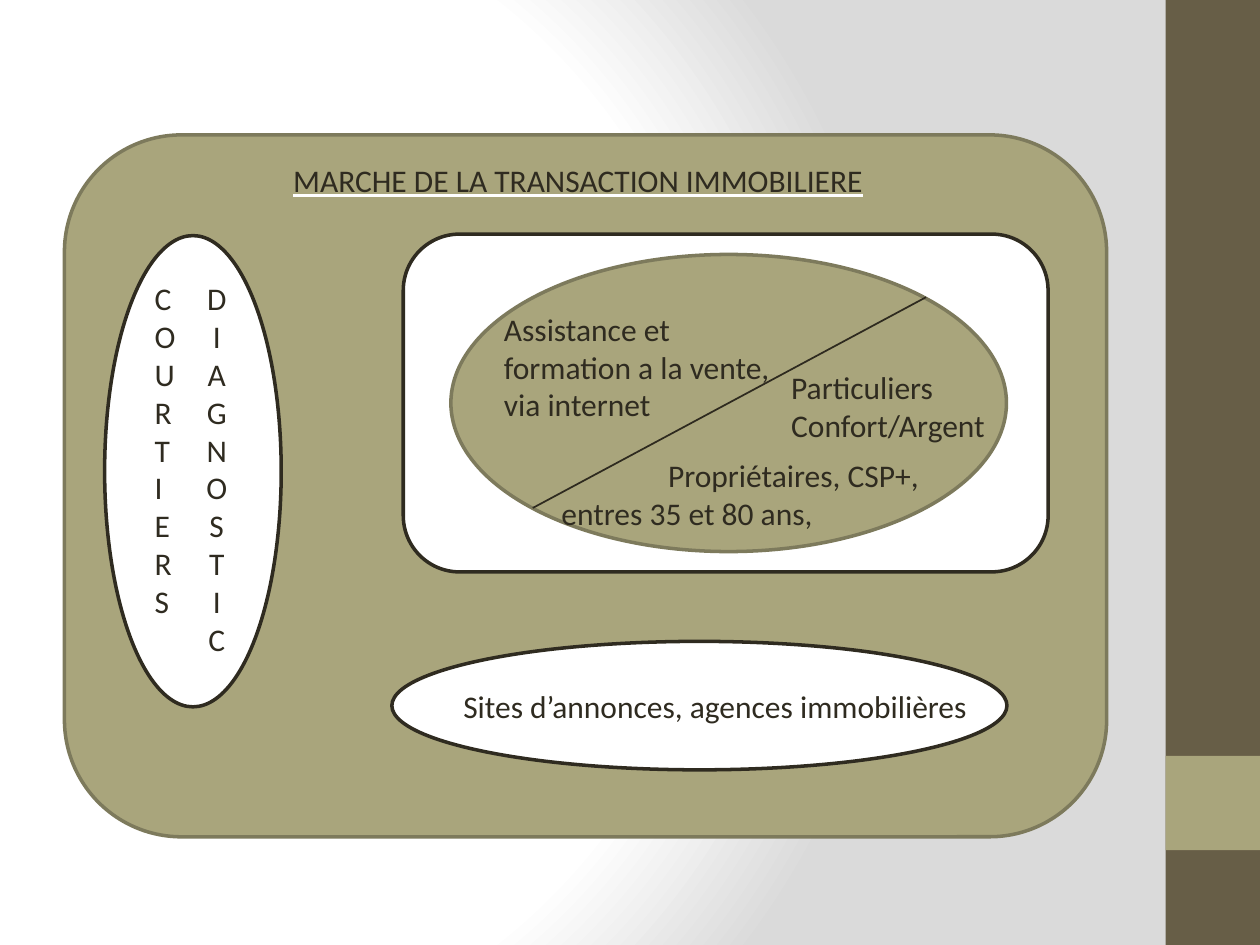
from dataclasses import dataclass
from itertools import zip_longest

from lxml.etree import SubElement
from pptx import Presentation
from pptx.dml.color import RGBColor
from pptx.enum.shapes import MSO_CONNECTOR as Connector, MSO_SHAPE as Shape
from pptx.enum.text import MSO_AUTO_SIZE as AutoSize
from pptx.oxml import parse_xml
from pptx.oxml.ns import nsdecls, qn
from pptx.util import Cm, Pt


@dataclass(frozen=True)
class Theme:
    """Colours, font and sizes of the slide."""
    white: str = "FFFFFF"
    mist: str = "DADADA"
    olive: str = "A9A57C"
    olive_edge: str = "7D7A5C"
    bark: str = "675E47"
    ink: str = "2F2B20"
    divider: str = "2E2A1F"
    font: str = "Calibri"
    text_size: int = 18
    outline: int = 2
    hairline: int = 1


THEME = Theme()


def rgb(colour):
    """Turn a hex string into a colour."""
    return RGBColor.from_string(colour)


def paint_background(slide):
    """Fill the background with a circular white-to-grey gradient."""
    slide.background.fill.gradient()
    plain = next(slide.element.iter(qn("a:gradFill")))
    stops = "".join(
        f'<a:gs pos="{percent * 1000}"><a:srgbClr val="{colour}"/></a:gs>'
        for percent, colour in ((0, THEME.white), (75, THEME.white), (100, THEME.mist))
    )
    circular = parse_xml(
        f'<a:gradFill {nsdecls("a")} rotWithShape="1"><a:gsLst>{stops}</a:gsLst>'
        '<a:path path="circle"><a:fillToRect l="20000" t="50000" r="100000" b="50000"/>'
        '</a:path></a:gradFill>'
    )
    plain.getparent().replace(plain, circular)


def add_zone(slide, kind, box, fill, edge=None):
    """Draw a filled preset shape, outlined when an edge colour is given."""
    zone = slide.shapes.add_shape(kind, *map(Cm, box))
    zone.shadow.inherit = False
    zone.fill.solid()
    zone.fill.fore_color.rgb = rgb(fill)
    if edge:
        zone.line.color.rgb = rgb(edge)
        zone.line.width = Pt(THEME.outline)
    else:
        zone.line.fill.background()


def add_label(slide, box, text):
    """Write wrapped text and return its paragraphs."""
    label = slide.shapes.add_textbox(*map(Cm, box))
    frame = label.text_frame
    frame.word_wrap = True
    frame.auto_size = AutoSize.SHAPE_TO_FIT_TEXT
    frame.text = text
    for paragraph in frame.paragraphs:
        for run in paragraph.runs:
            run.font.name = THEME.font
            run.font.size = Pt(THEME.text_size)
            run.font.color.rgb = rgb(THEME.ink)
    return frame.paragraphs


def add_title(slide, box, text):
    """Write the title with a white underline."""
    font = add_label(slide, box, text)[0].runs[0].font
    font.underline = True
    underline = parse_xml(
        f'<a:uFill {nsdecls("a")}><a:solidFill><a:srgbClr val="{THEME.white}"/>'
        '</a:solidFill></a:uFill>'
    )
    next(font._element.iter(qn("a:latin"))).addprevious(underline)


def add_stacked_words(slide, box, left_word, right_word, gap):
    """Spell two words downwards, side by side."""
    letters = zip_longest(left_word, right_word, fillvalue="")
    rows = "\n".join("\t".join(pair) for pair in letters)
    for paragraph in add_label(slide, box, rows):
        tabs = SubElement(paragraph._p.get_or_add_pPr(), qn("a:tabLst"))
        SubElement(tabs, qn("a:tab"), pos=str(Cm(gap)), algn="ctr")


def add_divider(slide, start, end):
    """Draw a thin straight line."""
    divider = slide.shapes.add_connector(Connector.STRAIGHT, *map(Cm, start + end))
    divider.line.color.rgb = rgb(THEME.divider)
    divider.line.width = Pt(THEME.hairline)
    SubElement(divider._element.spPr, qn("a:effectLst"))


def main():
    """Build the property market slide."""
    deck = Presentation()
    deck.slide_width, deck.slide_height = Cm(25.4), Cm(19.05)
    slide = deck.slides.add_slide(deck.slide_layouts[6])
    paint_background(slide)

    add_zone(slide, Shape.RECTANGLE, (23.5, 0, 1.9, 19.05), THEME.bark)
    add_zone(slide, Shape.RECTANGLE, (23.5, 15.24, 1.9, 1.9), THEME.olive)

    market = (1.3, 2.72, 21.01, 14.15)
    offer_frame = (8.13, 4.72, 13, 6.81)
    competitors = (7.9, 12.93, 12.4, 2.59)
    partners = (2.11, 4.75, 3.56, 9.5)
    offer = (9.09, 5.13, 11.2, 5.99)
    add_zone(slide, Shape.ROUNDED_RECTANGLE, market, THEME.olive, THEME.olive_edge)
    add_zone(slide, Shape.ROUNDED_RECTANGLE, offer_frame, THEME.white, THEME.ink)
    for circle in (competitors, partners):
        add_zone(slide, Shape.OVAL, circle, THEME.white, THEME.ink)
    add_zone(slide, Shape.OVAL, offer, THEME.olive, THEME.olive_edge)

    add_label(slide, (9.09, 13.72, 11.2, 1.02), "Sites d’annonces, agences immobilières")
    add_stacked_words(slide, (2.87, 5.51, 2.36, 7.95), "COURTIERS", "DIAGNOSTIC", 1.25)
    add_title(slide, (5.66, 3.12, 12.4, 1.02), "MARCHE DE LA TRANSACTION IMMOBILIERE")
    add_divider(slide, (10.74, 10.24), (18.67, 5.99))
    add_label(slide, (9.91, 6.12, 6.4, 2.57),
              "Assistance et formation a la vente, via internet")
    add_label(slide, (15.7, 7.29, 4.6, 1.8), "Particuliers\nConfort/Argent")
    owners = add_label(slide, (11.07, 9.07, 8.36, 1.8),
                       "Propriétaires, CSP+, entres 35 et 80 ans,")[0]
    owners._p.get_or_add_pPr().set("indent", str(Cm(2.15)))

    deck.save("out.pptx")


if __name__ == "__main__":
    main()
